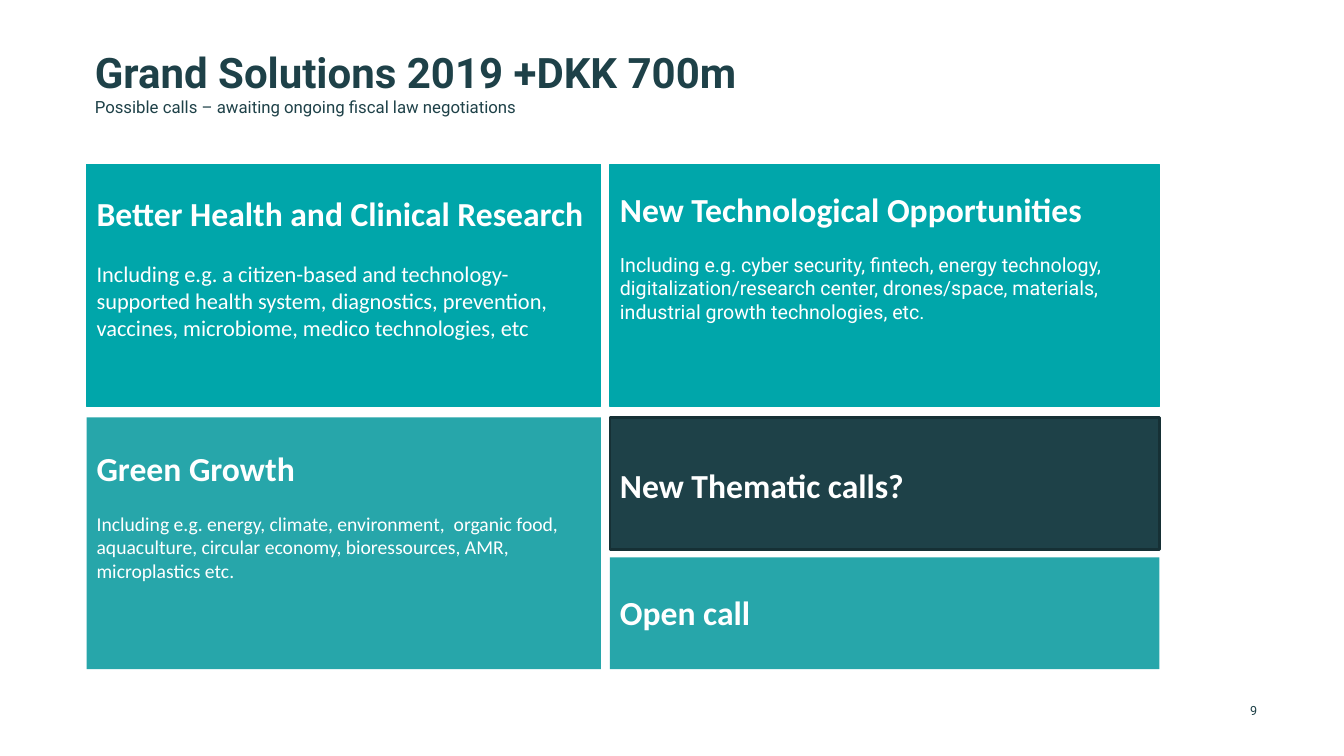
from pptx import Presentation
from pptx.dml.color import RGBColor
from pptx.enum.shapes import MSO_SHAPE
from pptx.enum.text import MSO_ANCHOR, MSO_AUTO_SIZE, PP_ALIGN
from pptx.util import Inches, Pt

RECT = MSO_SHAPE.RECTANGLE
TOP, MIDDLE = MSO_ANCHOR.TOP, MSO_ANCHOR.MIDDLE
LEFT, RIGHT = PP_ALIGN.LEFT, PP_ALIGN.RIGHT
FIXED = MSO_AUTO_SIZE.NONE


class Theme:
    dark = RGBColor.from_string("1E4148")
    edge = RGBColor.from_string("163035")
    teal = RGBColor.from_string("00A6AA")
    soft = RGBColor.from_string("27A6AA")
    white = RGBColor.from_string("FFFFFF")
    sans, head = "Roboto", "Calibri"
    title, sub, call, page = 30, 12, 24, 9


def style(font, name, size, color, bold=False):
    font.name, font.size, font.bold = name, Pt(size), bold
    font.color.rgb = color


def trim(frame, anchor, top=0):
    frame.margin_left = frame.margin_right = frame.margin_bottom = 0
    frame.margin_top = Inches(top)
    frame.vertical_anchor = anchor
    frame.word_wrap, frame.auto_size = True, FIXED


deck = Presentation()
deck.slide_width, deck.slide_height = Inches(13.33), Inches(7.5)
slide = deck.slides.add_slide(deck.slide_layouts[5])

# Title with its subtitle line
title = slide.shapes.title
title.left, title.top = Inches(0.94), Inches(0.43)
title.width, title.height = Inches(12.07), Inches(0.51)
trim(title.text_frame, TOP, 0.03)
line = title.text_frame.paragraphs[0]
line.alignment = LEFT
run = line.add_run()
run.text = "Grand Solutions 2019 +DKK 700m"
style(run.font, Theme.sans, Theme.title, Theme.dark, True)
line.add_line_break()
run = line.add_run()
run.text = "Possible calls – awaiting ongoing fiscal law negotiations"
style(run.font, Theme.sans, Theme.sub, Theme.dark)

# Grid: (start, length) of each column and row
COLS = [(0.86, 5.1), (6.05, 5.45)]
ROWS = [(1.63, 2.4), (4.14, 2.5), (4.14, 1.31), (5.53, 1.11)]

# Calls: column, row, fill, (line, width), top inset, heading, (body, font, size)
calls = [
    (0, 0, Theme.teal, (Theme.teal, 0.75), 0.28,
     "Better Health and Clinical Research",
     ("Including e.g. a citizen-based and technology-supported health system, "
      "diagnostics, prevention, vaccines, microbiome, medico technologies, etc",
      Theme.head, 16)),
    (1, 0, Theme.teal, (Theme.teal, 0.75), 0.24,
     "New Technological Opportunities",
     ("Including e.g. cyber security, fintech, energy technology, "
      "digitalization/research center, drones/space, materials, "
      "industrial growth technologies, etc.", Theme.sans, 14)),
    (0, 1, Theme.soft, None, 0.3, "Green Growth",
     ("Including e.g. energy, climate, environment,  organic food, aquaculture, "
      "circular economy, bioressources, AMR, microplastics etc.",
      Theme.head, 14)),
    (1, 2, Theme.dark, (Theme.edge, 2), 0.47, "New Thematic calls?", None),
    (1, 3, Theme.soft, None, 0.34, "Open call", None),
]
for col, row, fill, edge, inset, head, body in calls:
    (x, w), (y, h) = COLS[col], ROWS[row]
    box = slide.shapes.add_shape(RECT, Inches(x), Inches(y), Inches(w), Inches(h))
    box.shadow.inherit = False
    box.fill.solid()
    box.fill.fore_color.rgb = fill
    if edge:
        box.line.color.rgb, box.line.width = edge[0], Pt(edge[1])
    else:
        box.line.fill.background()
    frame = box.text_frame
    frame.word_wrap, frame.vertical_anchor = True, TOP
    frame.margin_top = Inches(inset)
    para = frame.paragraphs[0]
    para.text, para.alignment = head, LEFT
    style(para.font, Theme.head, Theme.call, Theme.white, True)
    if body:
        text, font, size = body
        para.space_after = Pt(size * 1.22)
        para = frame.add_paragraph()
        para.text, para.alignment = text, LEFT
        style(para.font, font, size, Theme.white)

# Page number
page = slide.shapes.add_textbox(Inches(12.04), Inches(6.85), Inches(0.43), Inches(0.4))
trim(page.text_frame, MIDDLE)
para = page.text_frame.paragraphs[0]
para.text, para.alignment = "9", RIGHT
style(para.font, Theme.sans, Theme.page, Theme.dark)

deck.save("out.pptx")
